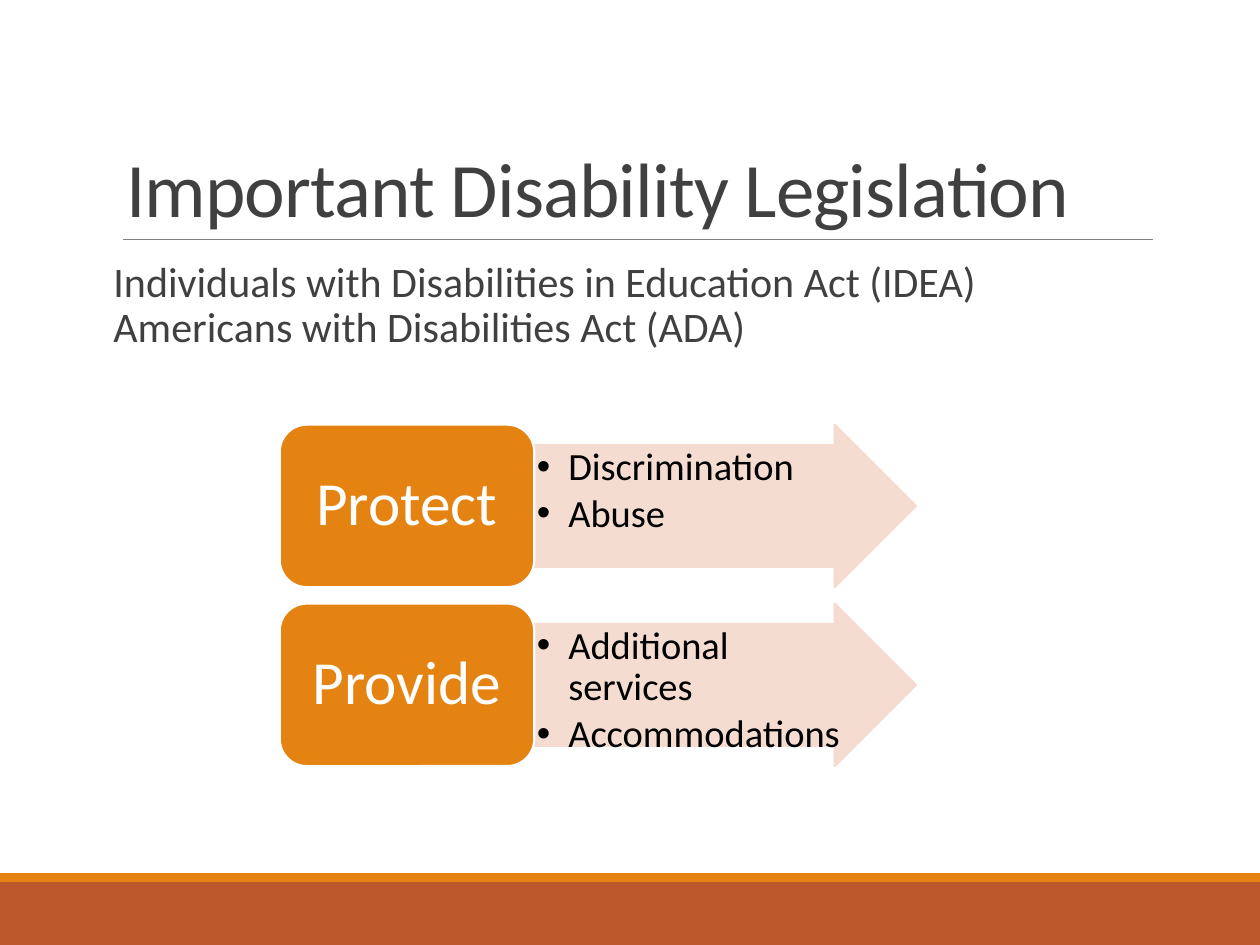
from pptx import Presentation
from pptx import util as u
from pptx.dml.color import RGBColor
from pptx.enum import shapes, text
from pptx.oxml.ns import qn
from lxml import etree

Inches, Pt = u.Inches, u.Pt
ORANGE, RUST, PEACH, GREY = "E48312", "BD582C", "F5D9CC", "404040"


def add_block(kind, left, top, width, height, fill, line=None, opacity=None):
    """Add a preset shape, with an outline and transparency if given."""
    block = slide.shapes.add_shape(
        kind, Inches(left), Inches(top), Inches(width), Inches(height))
    block.shadow.inherit = False
    block.fill.solid()
    block.fill.fore_color.rgb = RGBColor.from_string(fill)
    if line:
        block.line.color.rgb = RGBColor.from_string(line)
        block.line.width = Pt(1.25)
    else:
        block.line.fill.background()
    if opacity:
        for color in block._element.spPr.iter(qn("a:srgbClr")):
            etree.SubElement(color, qn("a:alpha"), val=str(opacity * 1000))
    return block


def write(frame, lines, size, color, margins, bullet=None, **formats):
    """Fill a text frame with equally formatted paragraphs."""
    frame.word_wrap = True
    frame.auto_size = text.MSO_AUTO_SIZE.NONE
    sides = ("margin_left", "margin_top", "margin_right", "margin_bottom")
    for side, margin in zip(sides, margins):
        setattr(frame, side, Inches(margin))
    for i, line in enumerate(lines):
        paragraph = frame.paragraphs[0] if i == 0 else frame.add_paragraph()
        paragraph.text = line
        properties = paragraph._p.get_or_add_pPr()
        indent = Inches(0.25) if bullet else 0
        properties.set("marL", str(indent))
        properties.set("indent", str(-indent))
        if bullet:
            etree.SubElement(properties, qn("a:buFont"), typeface="Arial")
            etree.SubElement(properties, qn("a:buChar"), char=bullet)
        else:
            etree.SubElement(properties, qn("a:buNone"))
        settings = {"alignment": text.PP_ALIGN.LEFT, "line_spacing": 0.9,
                    "space_before": Pt(0), **formats}
        for name, value in settings.items():
            setattr(paragraph, name, value)
        for run in paragraph.runs:
            run.font.name = "Calibri"
            run.font.size = Pt(size)
            run.font.color.rgb = RGBColor.from_string(color)


prs = Presentation()
prs.slide_width, prs.slide_height = Inches(10), Inches(7.5)
slide = prs.slides.add_slide(prs.slide_layouts[1])

# Footer bands and title rule
add_block(shapes.MSO_SHAPE.RECTANGLE, 0, 7, 10, 0.5, RUST)
add_block(shapes.MSO_SHAPE.RECTANGLE, 0, 6.93, 10, 0.07, ORANGE)
rule = slide.shapes.add_connector(
    shapes.MSO_CONNECTOR.STRAIGHT,
    Inches(0.98), Inches(1.9), Inches(9.15), Inches(1.9))
rule.line.color.rgb = RGBColor.from_string("808080")
rule.line.width = Pt(0.5)
etree.SubElement(rule._element.spPr, qn("a:effectLst"))

# Title and list of acts
title, acts = slide.placeholders
for holder, top, height in ((title, 0.31, 1.59), (acts, 2.02, 4.4)):
    holder.left, holder.top = Inches(0.9), Inches(top)
    holder.width, holder.height = Inches(8.25), Inches(height)
title.text_frame.vertical_anchor = text.MSO_ANCHOR.BOTTOM
write(title.text_frame, ["Important Disability Legislation"], 44, GREY,
      (0.1, 0.05, 0.1, 0.05), line_spacing=0.85)
title.text_frame.paragraphs[0].runs[0].font._element.set("spc", "-50")
write(acts.text_frame,
      ["Individuals with Disabilities in Education Act (IDEA)\v"
       "Americans with Disabilities Act (ADA)"],
      24, GREY, (0, 0.05, 0, 0.05), space_after=Pt(2))

# What the acts do: one labelled arrow per goal
goals = {
    "Protect": ["Discrimination", "Abuse"],
    "Provide": ["Additional services", "Accommodations"],
}
for row, (goal, examples) in enumerate(goals.items()):
    top = 3.37 + row * 1.42
    arrow = add_block(shapes.MSO_SHAPE.RIGHT_ARROW, 4.24, top, 3.03, 1.29,
                      PEACH, line=PEACH, opacity=90)
    arrow.adjustments[0] = 0.75
    details = slide.shapes.add_textbox(
        Inches(4.24), Inches(top + 0.16), Inches(2.55), Inches(0.97))
    write(details.text_frame, examples, 22, "000000", (0.02,) * 4,
          bullet="•", space_after=Pt(3))
    label = add_block(shapes.MSO_SHAPE.ROUNDED_RECTANGLE, 2.22, top, 2.02, 1.29,
                      ORANGE, line="FFFFFF")
    label.text_frame.vertical_anchor = text.MSO_ANCHOR.MIDDLE
    write(label.text_frame, [goal], 35, "FFFFFF", (0.15, 0.07, 0.15, 0.07),
          alignment=text.PP_ALIGN.CENTER)

prs.save("out.pptx")
